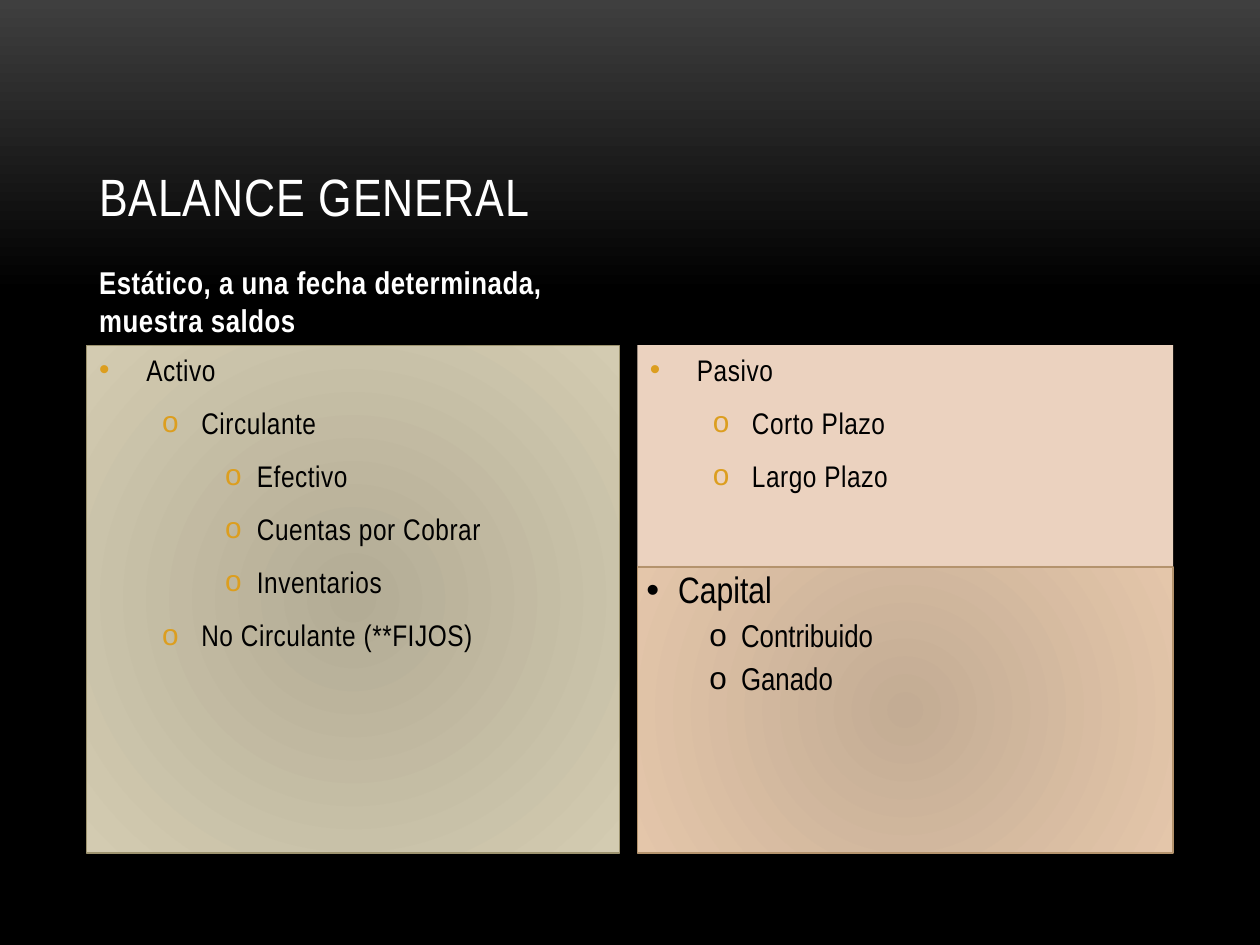
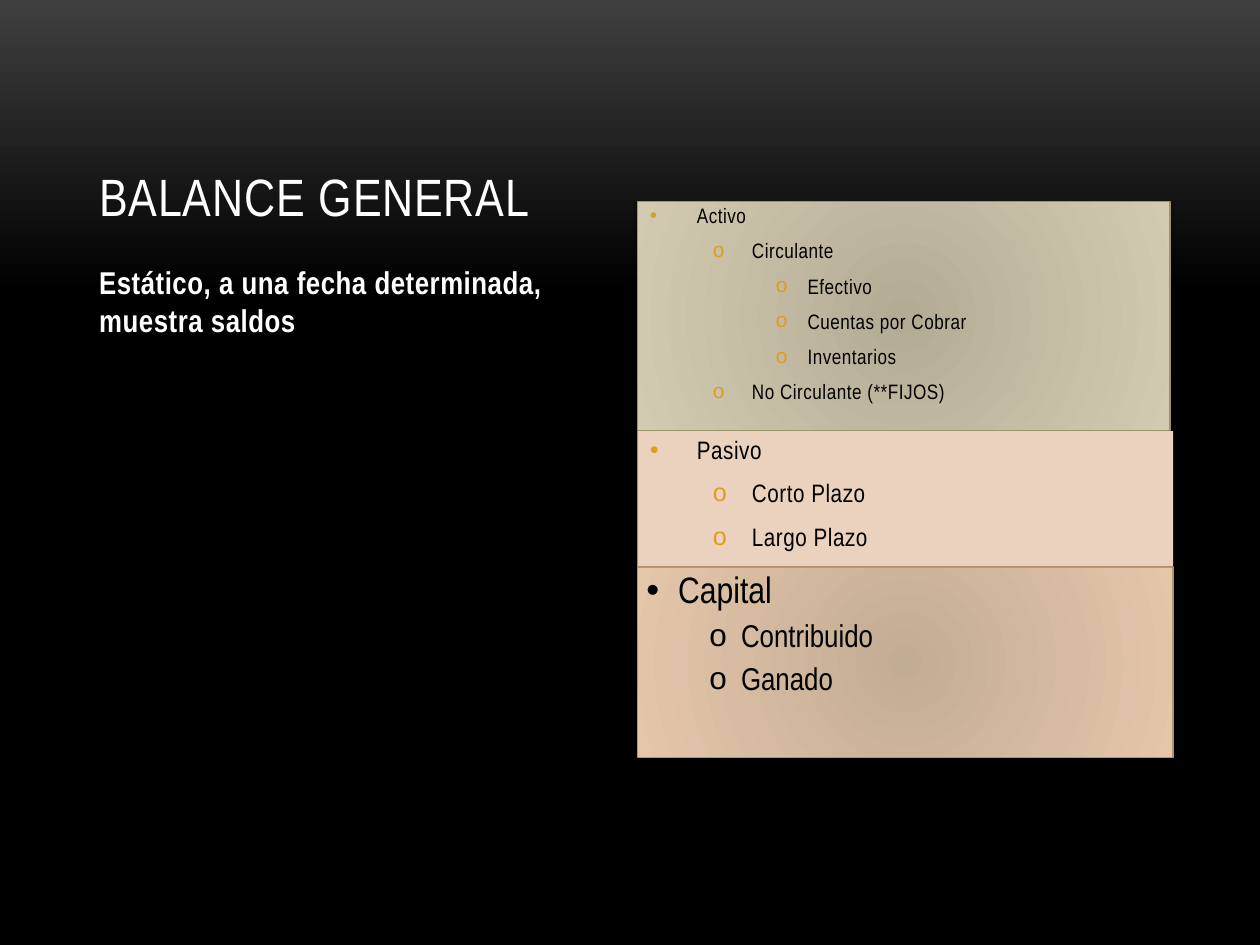
from copy import deepcopy

from lxml import etree
from pptx import Presentation
from pptx.dml.color import RGBColor
from pptx.enum.shapes import MSO_SHAPE
from pptx.enum.text import MSO_ANCHOR, PP_ALIGN
from pptx.oxml.ns import qn
from pptx.util import Cm, Pt

RECT = MSO_SHAPE.RECTANGLE
TOP, BOTTOM = MSO_ANCHOR.TOP, MSO_ANCHOR.BOTTOM
LEFT = PP_ALIGN.LEFT

# Shared colours, font and columns
BLACK = RGBColor(0x00, 0x00, 0x00)
WHITE = RGBColor(0xFF, 0xFF, 0xFF)
GREY = RGBColor(0x3F, 0x3F, 0x3F)
GOLD = RGBColor(0xDC, 0x9E, 0x1F)
OLIVE = RGBColor(0xB3, 0xAC, 0x95)
SAND = RGBColor(0xD3, 0xCB, 0xB1)
MOSS = RGBColor(0x9D, 0x93, 0x6F)
PEACH = RGBColor(0xEB, 0xD2, 0xBF)
TAN = RGBColor(0xC3, 0xAC, 0x94)
CREAM = RGBColor(0xE4, 0xC6, 0xAA)
BROWN = RGBColor(0xB4, 0x93, 0x6D)

FONT = "Arial Narrow"
COL_1, COL_2 = 1.75, 12.85
WIDE, SLIM = 10.8, 10.74
SPLIT = 11.43  # where liabilities end and capital starts

# Text of each block as (level, words)
ASSETS = [(0, "Activo"), (1, "Circulante"), (2, "Efectivo"),
          (2, "Cuentas por Cobrar"), (2, "Inventarios"),
          (1, "No Circulante (**FIJOS)")]
DEBTS = [(0, "Pasivo"), (1, "Corto Plazo"), (1, "Largo Plazo")]
CAPITAL = [(0, "Capital"), (1, "Contribuido"), (1, "Ganado")]

# Left margin and hanging indent by level, in cm
BODY_STEPS = [(0.95, 0.95), (2.06, 0.79), (3.18, 0.64)]
CAP_STEPS = [(0.64, 0.64), (1.91, 0.64)]


def add_sub(parent, tag, **attrs):
    return etree.SubElement(parent, qn(tag), attrs)


def add_run(para, words, size, color, bold=False, track=0):
    run = para.add_run()
    run.text = words
    font = run.font
    font.name, font.size, font.bold = FONT, Pt(size), bold
    font.color.rgb = color
    if track:
        run._r.get_or_add_rPr().set("spc", str(track))


def add_label(slide, box, words, size, bold, track):
    label = slide.shapes.add_textbox(*map(Cm, box))
    frame = label.text_frame
    frame.word_wrap = True
    frame.vertical_anchor = BOTTOM
    add_run(frame.paragraphs[0], words, size, WHITE, bold, track)


def set_stops(fill, *colors):
    fill.gradient()
    for stop, color in zip(fill.gradient_stops, colors):
        stop.color.rgb = color


def paint_back(slide):
    """Fade from grey to black in the top third."""
    fill = slide.background.fill
    set_stops(fill, GREY, BLACK)
    fill.gradient_angle = 270
    last = slide.element.find(".//" + qn("a:gsLst"))[-1]
    last.addprevious(deepcopy(last))
    fill.gradient_stops[1].position = 0.31


def add_panel(slide, box, fill, edge=None):
    """Rectangle: plain for one colour, radial with a shadow for two."""
    panel = slide.shapes.add_shape(RECT, *map(Cm, box))
    panel.shadow.inherit = False
    frame = panel.text_frame
    frame.word_wrap = True
    frame.vertical_anchor = TOP
    if edge is None:
        panel.fill.solid()
        panel.fill.fore_color.rgb = fill
        panel.line.fill.background()
        return panel

    set_stops(panel.fill, *fill)
    panel.line.color.rgb = edge
    panel.line.width = Pt(0.75)
    props = panel._element.spPr
    grad = props.find(qn("a:gradFill"))
    grad.remove(grad.find(qn("a:lin")))
    ring = add_sub(grad, "a:path", path="circle")
    add_sub(ring, "a:fillToRect", **dict.fromkeys("ltrb", "100000"))
    shade = add_sub(props.find(qn("a:effectLst")), "a:outerShdw",
                    blurRad=str(Pt(3)), dist=str(Pt(2)), dir="5400000",
                    rotWithShape="0")
    tint = add_sub(shade, "a:srgbClr", val=str(BLACK))
    add_sub(tint, "a:alpha", val="40000")
    return panel


def set_bullet(para, level, steps, color):
    para.level = level
    para.alignment = LEFT
    margin, hang = steps[level]
    props = para._p.get_or_add_pPr()
    props.set("marL", str(Cm(margin)))
    props.set("indent", str(-Cm(hang)))
    add_sub(add_sub(props, "a:buClr"), "a:srgbClr", val=str(color))
    add_sub(props, "a:buFont", typeface="Arial")
    add_sub(props, "a:buChar", char="o" if level else "•")


def add_list(panel, items, steps, sizes, color, lead, before, after, track=0):
    frame = panel.text_frame
    for i, (level, words) in enumerate(items):
        para = frame.add_paragraph() if i else frame.paragraphs[0]
        set_bullet(para, level, steps, color)
        para.line_spacing = lead
        para.space_before = Pt(before if i else 0)
        para.space_after = Pt(after)
        add_run(para, words, sizes[level], BLACK, track=track)


def add_body(panel, items, size, lead):
    # Space before is a fifth of the line height
    add_list(panel, items, BODY_STEPS, [size] * 3, GOLD, lead,
             round(0.23 * size, 1), 6, 30)


def add_capital(slide, height):
    panel = add_panel(slide, (COL_2, SPLIT, WIDE, height), (TAN, CREAM), BROWN)
    frame = panel.text_frame
    frame.margin_left = frame.margin_right = Cm(0.18)
    frame.margin_top = frame.margin_bottom = Cm(0.1)
    add_list(panel, CAPITAL, CAP_STEPS, [21, 18], BLACK, 0.9, 5, 0)


def add_sheet(deck, assets, debts, cap_high):
    """assets: box, size, line spacing; debts: top, size, line spacing."""
    slide = deck.slides.add_slide(deck.slide_layouts[6])
    paint_back(slide)
    # Heading
    add_label(slide, (COL_1, 1.02, 21.89, 3.68), "BALANCE GENERAL",
              30, False, 50)
    add_label(slide, (COL_1, 4.67, SLIM, 2.29),
              "Estático, a una fecha determinada, muestra saldos",
              18, True, 30)
    # Three blocks of the balance
    box, size, lead = assets
    add_body(add_panel(slide, box, (OLIVE, SAND), MOSS), ASSETS, size, lead)
    top, size, lead = debts
    box = (COL_2, top, WIDE, SPLIT - top)
    add_body(add_panel(slide, box, PEACH), DEBTS, size, lead)
    add_capital(slide, cap_high)


def main():
    deck = Presentation()
    deck.slide_width, deck.slide_height = Cm(25.4), Cm(19.05)
    # Assets beside liabilities and capital
    add_sheet(deck, ((COL_1, 6.96, SLIM, 10.24), 17, 1.0),
              (6.96, 17, 1.0), 5.77)
    # All blocks in one column
    add_sheet(deck, ((COL_2, 4.06, SLIM, 4.62), 11.9, 0.8),
              (8.69, 14.4, 0.9), 3.84)
    deck.save("out.pptx")


if __name__ == "__main__":
    main()
